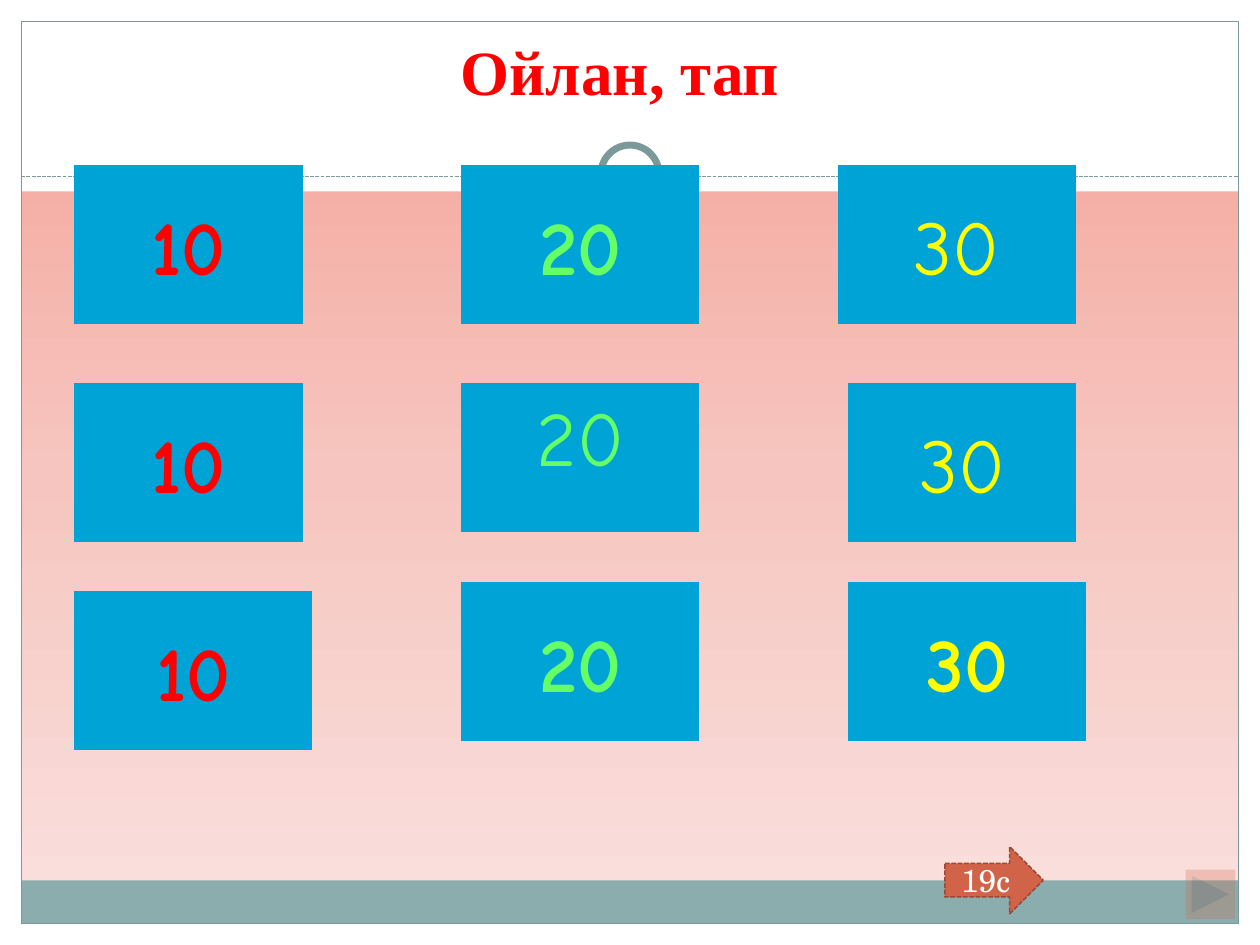
from copy import deepcopy
from dataclasses import dataclass

from lxml.etree import SubElement
from pptx import Presentation
from pptx.dml.color import RGBColor
from pptx.enum.dml import MSO_LINE
from pptx.enum.shapes import MSO_CONNECTOR, MSO_SHAPE
from pptx.enum.text import MSO_ANCHOR, PP_ALIGN
from pptx.oxml.ns import qn
from pptx.util import Cm, Pt


@dataclass(frozen=True)
class Theme:
    white: str = "FFFFFF"
    frame: str = "7C999A"
    footer: str = "8CADAE"
    tile: str = "00A3D6"
    accent: str = "D16349"
    accent_dark: str = "9B4936"
    red: str = "FF0000"
    green: str = "65FF65"
    yellow: str = "FFFF00"
    gradient: tuple = ((0, "F4A095"), (0.5, "F6C5BF"), (1, "FAE2E0"))
    number_font: str = "Comic Neue"
    title_font: str = "Times New Roman"
    button_font: str = "TeX Gyre Schola"
    number_size: int = 44
    title_size: int = 36
    button_size: int = 18


THEME = Theme()
WIDTH, HEIGHT, MARGIN = 25.4, 19.05, 0.43


def style_line(line, color, width, dash=None):
    line.color.rgb = RGBColor.from_string(color)
    line.width = Pt(width)
    if dash:
        line.dash_style = dash


def add_box(slide, kind, box, fill=None, line=None):
    """Add a preset shape; line is (color, width) or (color, width, dash)."""
    shape = slide.shapes.add_shape(kind, *map(Cm, box))
    shape.shadow.inherit = False
    if fill:
        shape.fill.solid()
        shape.fill.fore_color.rgb = RGBColor.from_string(fill)
    else:
        shape.fill.background()
    if line:
        style_line(shape.line, *line)
    else:
        shape.line.fill.background()
    return shape


def write(shape, text, font, size, color, bold=False, wrap=False, anchor=MSO_ANCHOR.MIDDLE):
    text_frame = shape.text_frame
    text_frame.text = text
    text_frame.word_wrap = wrap
    text_frame.vertical_anchor = anchor
    paragraph = text_frame.paragraphs[0]
    paragraph.alignment = PP_ALIGN.CENTER
    run_font = paragraph.runs[0].font
    run_font.name, run_font.size, run_font.bold = font, Pt(size), bold
    run_font.color.rgb = RGBColor.from_string(color)


def paint_background(slide):
    fill = slide.background.fill
    fill.gradient()
    fill.gradient_angle = 270
    first_stop = fill.gradient_stops[0]._gs
    first_stop.addnext(deepcopy(first_stop))
    for stop, (position, color) in zip(fill.gradient_stops, THEME.gradient):
        stop.position = position
        stop.color.rgb = RGBColor.from_string(color)


def add_frame(slide, box):
    """White header and margins, ringed divider, footer band and thin border."""
    left, top, width, height = box
    inner = (left + MARGIN, top + MARGIN, width - 2 * MARGIN, height - 2 * MARGIN)
    right, bottom = left + width - MARGIN, top + height - MARGIN
    middle, divider = left + width / 2, top + 3.56

    add_box(slide, MSO_SHAPE.RECTANGLE, (left, top, width, 3.86), THEME.white)
    line = slide.shapes.add_connector(
        MSO_CONNECTOR.STRAIGHT, Cm(inner[0]), Cm(divider), Cm(right), Cm(divider))
    style_line(line.line, THEME.frame, 0.75, MSO_LINE.SQUARE_DOT)
    SubElement(line._element.spPr, qn("a:effectLst"))
    for diameter, outline in ((1.7, None), (1.17, (THEME.frame, 4))):
        ring = (middle - diameter / 2, divider - 0.05 - diameter / 2, diameter, diameter)
        add_box(slide, MSO_SHAPE.OVAL, ring, THEME.white, outline)
    for edge in ((left, bottom, width, MARGIN), (left, top, width, MARGIN),
                 (right, top, MARGIN, height), (left, top, MARGIN, height)):
        add_box(slide, MSO_SHAPE.RECTANGLE, edge, THEME.white)
    add_box(slide, MSO_SHAPE.RECTANGLE, (inner[0], bottom - 0.87, inner[2], 0.87), THEME.footer)
    add_box(slide, MSO_SHAPE.RECTANGLE, inner, line=(THEME.frame, 0.75))


def add_title(slide, box):
    title = slide.shapes.add_textbox(*map(Cm, box))
    write(title, "Ойлан, тап", THEME.title_font, THEME.title_size, THEME.red,
          bold=True, anchor=MSO_ANCHOR.TOP)


def add_board(slide, box):
    """Three columns of number tiles: (x, y, width, bold) within the box."""
    left, top = box[:2]
    columns = (
        ("10", THEME.red, ((0, 0, 4.6, True), (0, 4.39, 4.6, True), (0, 8.59, 4.8, True))),
        ("20", THEME.green, ((7.8, 0, 4.8, True), (7.8, 8.41, 4.8, True))),
        ("30", THEME.yellow, ((15.39, 0, 4.8, False), (15.6, 4.39, 4.6, False),
                              (15.6, 8.41, 4.8, True))),
    )
    for number, color, tiles in columns:
        for x, y, width, bold in tiles:
            tile = add_box(slide, MSO_SHAPE.ACTION_BUTTON_CUSTOM,
                           (left + x, top + y, width, 3.2), THEME.tile)
            write(tile, number, THEME.number_font, THEME.number_size, color, bold)

    center = (left + 7.8, top + 4.39, 4.8)
    add_box(slide, MSO_SHAPE.ACTION_BUTTON_CUSTOM, (*center, 3), THEME.tile)
    label = slide.shapes.add_textbox(*map(Cm, (*center, 2.13)))
    write(label, "20", THEME.number_font, THEME.number_size, THEME.green,
          wrap=True, anchor=MSO_ANCHOR.TOP)


def add_navigation(slide, box):
    left, top = box[:2]
    forward = add_box(slide, MSO_SHAPE.ACTION_BUTTON_FORWARD_OR_NEXT,
                      (left + 4.85, top + 0.46, 1, 1), THEME.accent)
    color = forward.fill._xPr.find(qn("a:solidFill"))[0]
    SubElement(color, qn("a:alpha"), val="26000")
    arrow = add_box(slide, MSO_SHAPE.RIGHT_ARROW, (left, top, 1.98, 1.35), THEME.accent,
                    (THEME.accent_dark, 0.9, MSO_LINE.SQUARE_DOT))
    write(arrow, "19с", THEME.button_font, THEME.button_size, THEME.white)


def main():
    presentation = Presentation()
    presentation.slide_width, presentation.slide_height = Cm(WIDTH), Cm(HEIGHT)
    slide = presentation.slides.add_slide(presentation.slide_layouts[6])
    paint_background(slide)
    add_frame(slide, (0, 0, WIDTH, HEIGHT))
    add_board(slide, (1.5, 3.33, 20.4, 11.8))
    add_title(slide, (6.7, 0.53, 11.6, 2.39))
    add_navigation(slide, (19.05, 17.07, 5.85, 1.46))
    presentation.save("out.pptx")


if __name__ == "__main__":
    main()
